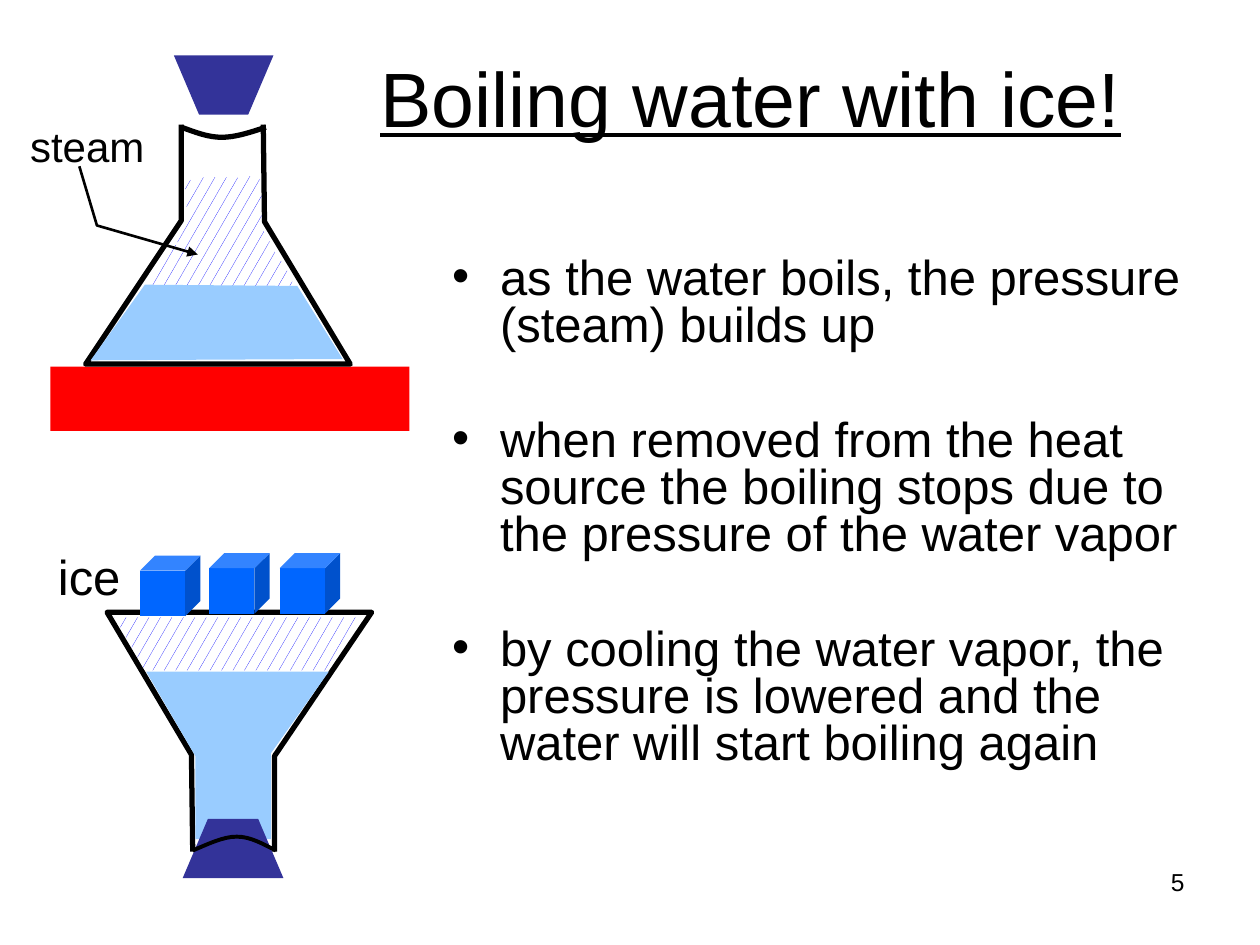
import pptx
import pptx.util
import pptx.dml.color
import pptx.enum.dml
import pptx.enum.shapes
import pptx.enum.text
import pptx.oxml
import pptx.oxml.ns
from pptx.util import Inches

RGBColor = pptx.dml.color.RGBColor
BLACK = RGBColor(0, 0, 0)
WHITE = RGBColor(255, 255, 255)
STEAM = RGBColor(0, 0, 255)
WATER = RGBColor(0x99, 0xCC, 0xFF)
STOPPER = RGBColor(0x33, 0x33, 0x99)
HEAT = RGBColor(255, 0, 0)
ICE = RGBColor(0, 0x66, 0xFF)
SHAPES = pptx.enum.shapes.MSO_SHAPE
ALIGN = pptx.enum.text.PP_ALIGN

POINTS = [
    "as the water boils, the pressure (steam) builds up",
    "when removed from the heat source the boiling stops due to the pressure of the water vapor",
    "by cooling the water vapor, the pressure is lowered and the water will start boiling again",
]


def add_element(parent, tag, attributes):
    parent.append(pptx.oxml.parse_xml(
        f'<a:{tag} {pptx.oxml.ns.nsdecls("a")} {attributes}/>'))


def add_span(para, text, size):
    span = para.add_run()
    span.text = text
    span.font.name = "Arial"
    span.font.size = pptx.util.Pt(size)
    span.font.color.rgb = BLACK
    return span


def add_box(page, left, top, width, height, wrap=True, margins=True):
    box = page.shapes.add_textbox(Inches(left), Inches(top), Inches(width), Inches(height))
    frame = box.text_frame
    frame.word_wrap = wrap
    if not margins:
        frame.margin_left = frame.margin_right = frame.margin_top = frame.margin_bottom = 0
    return box


def add_label(page, text, size, place, align=ALIGN.LEFT, **options):
    para = add_box(page, *place, **options).text_frame.paragraphs[0]
    para.alignment = align
    add_span(para, text, size)


def add_title(page, text):
    box = add_box(page, 2.92, 0.25, 6.48, 1.03)
    box.fill.solid()
    box.fill.fore_color.rgb = WHITE
    box.text_frame.vertical_anchor = pptx.enum.text.MSO_ANCHOR.MIDDLE
    add_span(box.text_frame.paragraphs[0], text, 44).font.underline = True


def add_bullets(page, texts):
    frame = add_box(page, 3.49, 2, 6.21, 4.33).text_frame
    for index, text in enumerate(texts):
        para = frame.add_paragraph() if index else frame.paragraphs[0]
        para.line_spacing = 0.8
        para.space_before = pptx.util.Pt(38.7 if index else 5.6)
        props = para._p.get_or_add_pPr()
        props.set("marL", str(Inches(0.38)))
        props.set("indent", str(Inches(-0.38)))
        add_element(props, "buFont", 'typeface="Arial"')
        add_element(props, "buChar", 'char="•"')
        add_span(para, text, 28)


def curve(start, *pieces, steps=8):
    """Points along joined cubic curves; each piece is (x1, y1, x2, y2, x, y)."""
    points = [start]
    for x1, y1, x2, y2, x3, y3 in pieces:
        x0, y0 = points[-1]
        for step in range(1, steps + 1):
            t = step / steps
            s = 1 - t
            weights = s ** 3, 3 * s * s * t, 3 * s * t * t, t ** 3
            points.append((sum(w * x for w, x in zip(weights, (x0, x1, x2, x3))),
                           sum(w * y for w, y in zip(weights, (y0, y1, y2, y3)))))
    return points


def draw_path(page, points, close):
    corners = [(Inches(x), Inches(y)) for x, y in points]
    builder = page.shapes.build_freeform(*corners[0])
    builder.add_line_segments(corners[1:], close=close)
    shape = builder.convert_to_shape()
    shape.shadow.inherit = False
    return shape


def paint(shape, color):
    shape.fill.solid()
    shape.fill.fore_color.rgb = color
    shape.line.fill.background()
    shape.shadow.inherit = False


def add_area(page, points, color):
    paint(draw_path(page, points, True), color)


def add_steam(page, points):
    shape = draw_path(page, points, True)
    shape.fill.patterned()
    shape.fill.pattern = pptx.enum.dml.MSO_PATTERN.SMALL_CONFETTI
    shape.fill.fore_color.rgb = STEAM
    shape.fill.back_color.rgb = WHITE
    shape.line.fill.background()


def add_outline(page, points, width, arrow=False):
    shape = draw_path(page, points, False)
    shape.fill.background()
    shape.line.color.rgb = BLACK
    shape.line.width = pptx.util.Pt(width)
    if arrow:
        add_element(shape.line._get_or_add_ln(), "tailEnd", 'type="triangle"')


def add_preset(page, kind, left, top, width, height, color):
    shape = page.shapes.add_shape(
        kind, Inches(left), Inches(top), Inches(width), Inches(height))
    paint(shape, color)


def draw_heated_flask(page):
    add_steam(page, curve(
        (1.51, 1.43),
        (1.59, 1.39, 1.81, 1.41, 1.91, 1.41), (2, 1.41, 2.03, 1.36, 2.06, 1.42),
        (2.09, 1.49, 2.07, 1.72, 2.08, 1.81), (2.09, 1.82, 2.15, 1.94, 2.16, 1.95),
        (2.17, 1.98, 2.08, 1.87, 2.09, 1.89), (2.1, 1.9, 2.18, 1.99, 2.22, 2.05),
        (2.23, 2.07, 2.34, 2.24, 2.33, 2.26), (2.31, 2.28, 2.14, 2.26, 2.11, 2.27),
        (2.1, 2.28, 1.9, 2.29, 1.9, 2.29), (1.68, 2.28, 1.23, 2.44, 1.17, 2.24),
        (1.18, 2.14, 1.32, 1.96, 1.41, 1.94), (1.41, 1.87, 1.44, 1.79, 1.48, 1.71),
        (1.5, 1.62, 1.43, 1.47, 1.51, 1.43)))
    add_area(page, [(1.38, 0.44), (1.58, 0.91), (1.97, 0.91), (2.17, 0.44)], STOPPER)
    add_preset(page, SHAPES.RECTANGLE, 0.4, 2.91, 2.85, 0.51, HEAT)
    add_outline(page, [(1.44, 0.99), (1.44, 1.75), (0.68, 2.89),
                       (2.78, 2.89), (2.1, 1.76), (2.09, 0.99)], 3)
    add_area(page, [(1.15, 2.26), (2.36, 2.27), (2.72, 2.85), (0.72, 2.86)], WATER)
    add_outline(page, curve((1.44, 1.01), (1.55, 1.05, 1.65, 1.09, 1.76, 1.09),
                            (1.87, 1.09, 1.99, 1.05, 2.11, 1.01)), 3)
    add_label(page, "steam", 24, (0.14, 0.91, 1.11, 0.5), wrap=False)
    add_outline(page, [(0.63, 1.32), (0.77, 1.79), (1.57, 2.02)], 1.5, arrow=True)


def draw_cooled_flask(page):
    add_label(page, "ice", 28, (0.46, 4.34, 0.5, 0.47), wrap=False, margins=False)
    add_outline(page, [(2.18, 6.76), (2.18, 6), (2.95, 4.86),
                       (0.85, 4.86), (1.52, 5.99), (1.53, 6.76)], 3)
    add_area(page, [(1.16, 5.33), (2.61, 5.33), (2.15, 5.98),
                    (2.15, 6.66), (1.55, 6.66), (1.55, 6)], WATER)
    add_steam(page, [(0.91, 4.9), (2.89, 4.9), (2.6, 5.32), (1.15, 5.32)])
    add_area(page, [(2.25, 6.97), (2.05, 6.5), (1.65, 6.5), (1.45, 6.97)], STOPPER)
    add_outline(page, curve((1.53, 6.75), (1.65, 6.7, 1.77, 6.64, 1.88, 6.64),
                            (1.99, 6.64, 2.09, 6.7, 2.19, 6.75)), 2.25)
    for left, top in ((1.11, 4.41), (1.66, 4.39), (2.22, 4.39)):
        add_preset(page, SHAPES.CUBE, left, top, 0.48, 0.48, ICE)


def main():
    deck = pptx.Presentation()
    deck.slide_width, deck.slide_height = Inches(10), Inches(7.5)
    page = deck.slides.add_slide(deck.slide_layouts[6])

    # Text
    add_label(page, "5", 14, (7.17, 6.83, 2.33, 0.52), align=ALIGN.RIGHT)
    add_title(page, "Boiling water with ice!")
    add_bullets(page, POINTS)

    # Flasks
    draw_heated_flask(page)
    draw_cooled_flask(page)
    deck.save("out.pptx")


if __name__ == "__main__":
    main()
